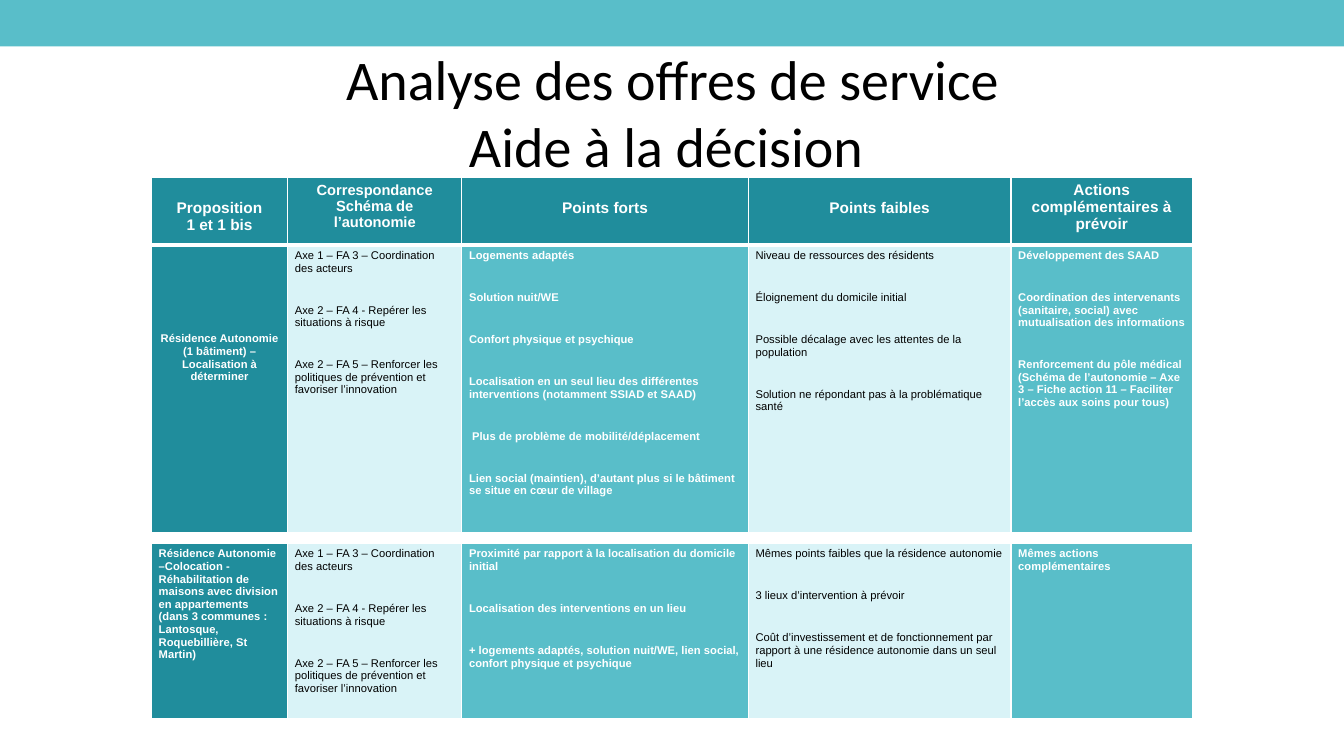
import pptx
import pptx.dml.color
import pptx.enum.shapes
import pptx.enum.text
import pptx.oxml.ns
import pptx.util
from lxml import etree
from pptx.util import Cm

RGBColor = pptx.dml.color.RGBColor
DARK_TEAL = RGBColor(0x20, 0x8D, 0x9C)
TEAL = RGBColor(0x59, 0xBE, 0xC9)
PALE = RGBColor(0xD9, 0xF3, 0xF7)
WHITE = RGBColor(0xFF, 0xFF, 0xFF)
BLACK = RGBColor(0x00, 0x00, 0x00)

CENTER = pptx.enum.text.PP_ALIGN.CENTER
LEFT = pptx.enum.text.PP_ALIGN.LEFT
TOP = pptx.enum.text.MSO_ANCHOR.TOP
MIDDLE = pptx.enum.text.MSO_ANCHOR.MIDDLE

HEADERS = [
    ["Proposition", "1 et 1 bis"],
    ["Correspondance Schéma de l’autonomie"],
    ["Points forts"],
    ["Points faibles"],
    ["Actions complémentaires à prévoir"],
]
AXES = [
    "Axe 1 – FA 3 – Coordination des acteurs",
    "Axe 2 – FA 4 - Repérer les situations à risque",
    "Axe 2 – FA 5 – Renforcer les politiques de prévention et favoriser l’innovation",
]
SINGLE_BUILDING = [
    ["Résidence Autonomie (1 bâtiment) – Localisation à déterminer"],
    AXES,
    [
        "Logements adaptés",
        "Solution nuit/WE",
        "Confort physique et psychique",
        "Localisation en un seul lieu des différentes interventions (notamment SSIAD et SAAD)",
        " Plus de problème de mobilité/déplacement",
        "Lien social (maintien), d’autant plus si le bâtiment se situe en cœur de village",
    ],
    [
        "Niveau de ressources des résidents",
        "Éloignement du domicile initial",
        "Possible décalage avec les attentes de la population",
        "Solution ne répondant pas à la problématique santé",
    ],
    [
        "Développement des SAAD",
        "Coordination des intervenants (sanitaire, social) avec mutualisation des informations",
        "Renforcement du pôle médical (Schéma de l’autonomie – Axe 3 – Fiche action 11 – "
        "Faciliter l’accès aux soins pour tous)",
    ],
]
SHARED_HOUSES = [
    ["Résidence Autonomie –Colocation - Réhabilitation de maisons avec division en "
     "appartements (dans 3 communes : Lantosque, Roquebillière, St Martin)"],
    AXES,
    [
        "Proximité par rapport à la localisation du domicile initial",
        "Localisation des interventions en un lieu",
        "+ logements adaptés, solution nuit/WE, lien social, confort physique et psychique",
    ],
    [
        "Mêmes points faibles que la résidence autonomie",
        "3 lieux d’intervention à prévoir",
        "Coût d’investissement et de fonctionnement par rapport à une résidence autonomie "
        "dans un seul lieu",
    ],
    ["Mêmes actions complémentaires"],
]
COLUMN_FILLS = [DARK_TEAL, PALE, TEAL, PALE, TEAL]
COLUMN_WIDTHS = [3.43, 4.39, 7.22, 6.62, 4.57]
ROW_HEIGHTS = [1.7, 7.24, 0.28, 4.4]
HEADER_ROW, GAP_ROW = 0, 2


def add_border(cell, side, points):
    """Draw a white line on one side of the cell; call it before the fill is set."""
    line = etree.SubElement(
        cell._tc.get_or_add_tcPr(), pptx.oxml.ns.qn("a:ln" + side),
        w=str(int(pptx.util.Pt(points))))
    fill = etree.SubElement(line, pptx.oxml.ns.qn("a:solidFill"))
    etree.SubElement(fill, pptx.oxml.ns.qn("a:srgbClr"), val=str(WHITE))


def write_cell(cell, texts, size, color, bold, alignment, space_before):
    cell.text_frame.text = "\n".join(texts)
    for index, paragraph in enumerate(cell.text_frame.paragraphs):
        paragraph.alignment = alignment
        if index:
            paragraph.space_before = pptx.util.Pt(space_before)
        paragraph.font.name = "Arial"
        paragraph.font.size = pptx.util.Pt(size)
        paragraph.font.bold = bold
        paragraph.font.color.rgb = color


presentation = pptx.Presentation()
presentation.slide_width = Cm(33.87)
presentation.slide_height = Cm(19.05)
slide = presentation.slides.add_slide(presentation.slide_layouts[5])

band = slide.shapes.add_shape(
    pptx.enum.shapes.MSO_SHAPE.RECTANGLE, 0, 0, presentation.slide_width, Cm(1.17))
band.shadow.inherit = False
band.fill.solid()
band.fill.fore_color.rgb = TEAL
band.line.fill.background()

title = slide.shapes.title
title.left, title.top, title.width, title.height = Cm(5.97), Cm(0.97), Cm(21.95), Cm(3.68)
title_frame = title.text_frame
title_frame.text = "Analyse des offres de service\nAide à la décision "
title_frame.auto_size = pptx.enum.text.MSO_AUTO_SIZE.NONE
title_frame.vertical_anchor = MIDDLE
title_frame.margin_left = title_frame.margin_right = Cm(0.13)
title_frame.margin_top = title_frame.margin_bottom = Cm(0.13)
for paragraph in title_frame.paragraphs:
    paragraph.alignment = CENTER
    paragraph.font.name = "Calibri"
    paragraph.font.size = pptx.util.Pt(40)
    paragraph.font.color.rgb = BLACK

table = slide.shapes.add_table(
    len(ROW_HEIGHTS), len(COLUMN_WIDTHS), Cm(3.82), Cm(4.48),
    Cm(sum(COLUMN_WIDTHS)), Cm(sum(ROW_HEIGHTS))).table
table.horz_banding = False
for column, width in zip(table.columns, COLUMN_WIDTHS):
    column.width = Cm(width)
for row, height in zip(table.rows, ROW_HEIGHTS):
    row.height = Cm(height)

contents = [HEADERS, SINGLE_BUILDING, [[]] * len(COLUMN_WIDTHS), SHARED_HOUSES]
for row_index, row_texts in enumerate(contents):
    for column_index, texts in enumerate(row_texts):
        cell = table.cell(row_index, column_index)
        cell.vertical_anchor = TOP
        cell.margin_left = cell.margin_right = Cm(0.18)
        cell.margin_top = cell.margin_bottom = Cm(0.1)
        for side in "LRTB":
            under_header = (row_index, side) in [(HEADER_ROW, "B"), (HEADER_ROW + 1, "T")]
            add_border(cell, side, 3 if under_header else 1)
        cell.fill.solid()

        if row_index == GAP_ROW:
            cell.fill.fore_color.rgb = WHITE
            cell.margin_top = cell.margin_bottom = 0
            etree.SubElement(cell.text_frame.paragraphs[0]._p,
                             pptx.oxml.ns.qn("a:endParaRPr"), sz="400")
        elif row_index == HEADER_ROW:
            cell.fill.fore_color.rgb = DARK_TEAL
            size = 10.5 if column_index == 1 else 11
            write_cell(cell, texts, size, WHITE, True, CENTER, 0)
        else:
            fill = COLUMN_FILLS[column_index]
            cell.fill.fore_color.rgb = fill
            color = BLACK if fill == PALE else WHITE
            write_cell(cell, texts, 8, color, fill != PALE, LEFT, 21)

for column_index in (0, 2, 3):
    table.cell(HEADER_ROW, column_index).margin_top = Cm(0.55)
building_cell = table.cell(1, 0)
building_cell.margin_top = Cm(2.2)
building_cell.text_frame.paragraphs[0].alignment = CENTER

presentation.save("out.pptx")
